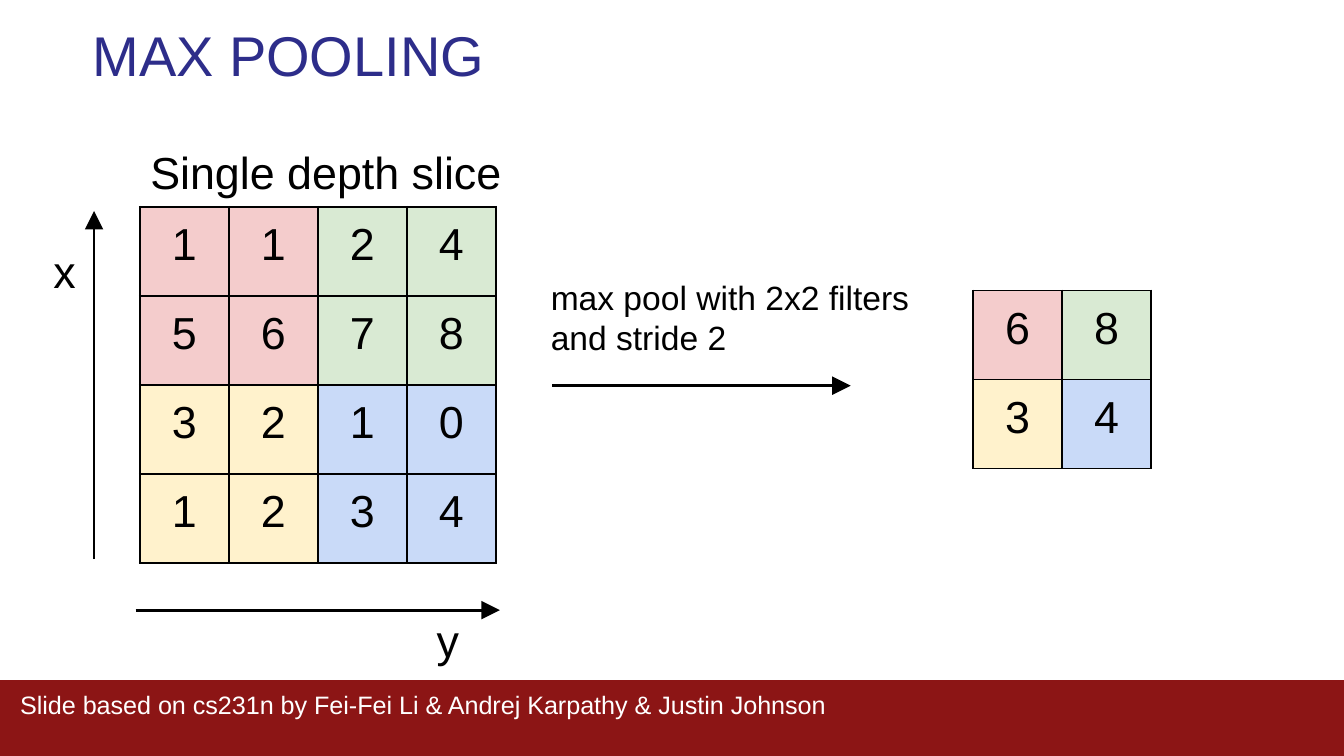
from lxml import etree
from pptx import Presentation
from pptx.dml.color import RGBColor
from pptx.enum.shapes import MSO_CONNECTOR, MSO_SHAPE
from pptx.enum.text import MSO_ANCHOR, PP_ALIGN
from pptx.oxml import parse_xml
from pptx.oxml.ns import nsdecls, qn
from pptx.util import Inches, Pt

STRAIGHT = MSO_CONNECTOR.STRAIGHT
RECTANGLE = MSO_SHAPE.RECTANGLE
TOP = MSO_ANCHOR.TOP
CENTER = PP_ALIGN.CENTER

THEME = {
    "font": "Arial",
    "black": "000000", "white": "FFFFFF", "title": "2D2D8A", "footer": "8C1515",
    # Quadrant colours: top left, top right, bottom left, bottom right
    "quadrants": [["F4CCCC", "D9EAD3"], ["FFF2CC", "C9DAF8"]],
    "title_size": 30, "label_size": 24, "note_size": 18, "footer_size": 13.5,
}
CELL_SIZE = Inches(2.65) // 4


def write_text(text_frame, text, size, color, inset=0.1):
    text_frame.word_wrap = True
    text_frame.vertical_anchor = TOP
    text_frame.margin_left = text_frame.margin_right = Inches(inset)
    text_frame.margin_top = text_frame.margin_bottom = Inches(inset)
    text_frame.text = text
    font = text_frame.paragraphs[0].runs[0].font
    font.name = THEME["font"]
    font.size = Pt(size)
    font.color.rgb = RGBColor.from_string(color)


def add_grid(slide, left, top, values, border_width):
    count = len(values)
    side = CELL_SIZE * count
    table = slide.shapes.add_table(
        count, count, Inches(left), Inches(top), side, side).table
    table.first_row = table.horz_banding = False
    for index in range(count):
        table.columns[index].width = CELL_SIZE
        table.rows[index].height = CELL_SIZE
    for row, row_values in enumerate(values):
        for column, value in enumerate(row_values):
            cell = table.cell(row, column)
            write_text(cell.text_frame, str(value), THEME["label_size"], THEME["black"])
            cell.margin_left = cell.margin_right = Inches(0.1)
            cell.margin_top = cell.margin_bottom = Inches(0.1)
            cell.vertical_anchor = TOP
            cell.text_frame.paragraphs[0].alignment = CENTER
            properties = cell._tc.get_or_add_tcPr()
            for edge in ("lnL", "lnR", "lnT", "lnB"):
                properties.append(parse_xml(
                    f'<a:{edge} {nsdecls("a")} w="{Pt(border_width)}"><a:solidFill>'
                    f'<a:srgbClr val="{THEME["black"]}"/></a:solidFill></a:{edge}>'))
            color = THEME["quadrants"][row * 2 // count][column * 2 // count]
            cell.fill.solid()
            cell.fill.fore_color.rgb = RGBColor.from_string(color)


# Widescreen 16:9 slide
presentation = Presentation()
presentation.slide_width = Inches(10)
presentation.slide_height = Inches(10) * 9 // 16
slide = presentation.slides.add_slide(presentation.slide_layouts[6])

# Footer band
band = slide.shapes.add_shape(RECTANGLE, 0, Inches(5.06), Inches(10), Inches(0.58))
band.shadow.inherit = False
band.fill.solid()
band.fill.fore_color.rgb = RGBColor.from_string(THEME["footer"])
band.line.fill.background()

# Input slice and pooled result
add_grid(slide, 1.04, 1.54, [[1, 1, 2, 4], [5, 6, 7, 8], [3, 2, 1, 0], [1, 2, 3, 4]], 1.25)
add_grid(slide, 7.24, 2.16, [[6, 8], [3, 4]], 0.75)

# Title, labels and credit: text, left, top, width, height, size, colour, inset
credit = "Slide based on cs231n by Fei-Fei Li & Andrej Karpathy & Justin Johnson"
label_size, black = THEME["label_size"], THEME["black"]
texts = [
    ("MAX POOLING", 0.59, 0.05, 7.27, 0.72, THEME["title_size"], THEME["title"], 0.1),
    ("Single depth slice", 1.02, 0.98, 2.86, 0.62, label_size, black, 0.1),
    ("x", 0.3, 1.71, 0.43, 0.51, label_size, black, 0.1),
    ("y", 3.15, 4.46, 0.43, 0.4, label_size, black, 0.1),
    ("max pool with 2x2 filters and stride 2", 4, 1.96, 2.93, 0.8,
     THEME["note_size"], black, 0.1),
    (credit, 0.08, 5.06, 9.8, 0.59, THEME["footer_size"], THEME["white"], 0.07),
]
for text, left, top, width, height, size, color, inset in texts:
    box = slide.shapes.add_textbox(Inches(left), Inches(top), Inches(width), Inches(height))
    write_text(box.text_frame, text, size, color, inset)

# Axis arrows and pooling arrow: start x, start y, end x, end y
for ends in [(0.7, 4.16, 0.7, 1.57), (1.01, 4.54, 3.72, 4.54), (4.11, 2.87, 6.33, 2.87)]:
    arrow = slide.shapes.add_connector(STRAIGHT, *map(Inches, ends))
    arrow.line.width = Pt(1.5)
    arrow.line.color.rgb = RGBColor.from_string(black)
    line = arrow.line._get_or_add_ln()
    etree.SubElement(line, qn("a:tailEnd"), type="triangle", w="lg", len="lg")
    etree.SubElement(arrow._element.spPr, qn("a:effectLst"))

presentation.save("out.pptx")
